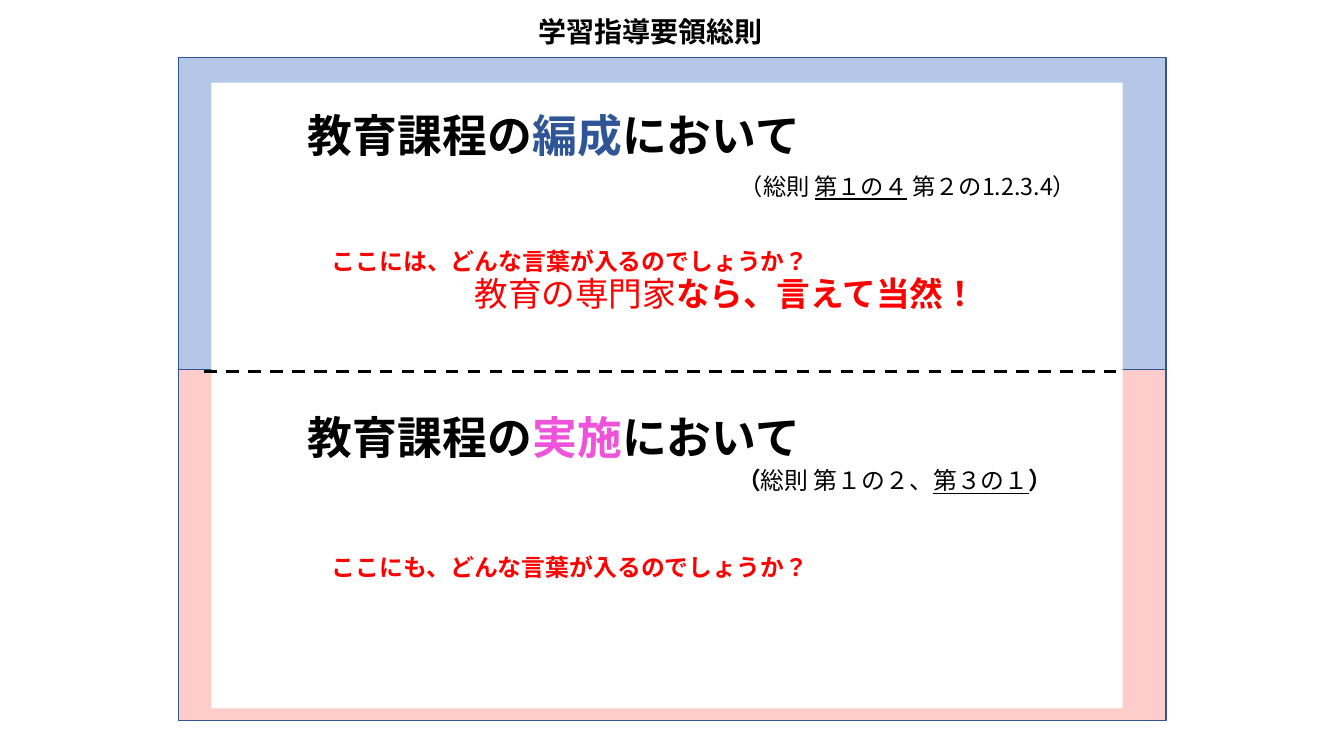
from dataclasses import dataclass
from pptx import Presentation
from pptx.dml.color import RGBColor
from pptx.enum.dml import MSO_LINE
from pptx.enum.lang import MSO_LANGUAGE_ID
from pptx.enum.shapes import MSO_CONNECTOR, MSO_SHAPE
from pptx.enum.text import MSO_ANCHOR, MSO_AUTO_SIZE, PP_ALIGN
from pptx.oxml.ns import qn
from pptx.util import Pt


@dataclass(frozen=True)
class Theme:
    font: str = "Noto Sans CJK JP"
    black: str = "000000"
    white: str = "FFFFFF"
    red: str = "FF0000"
    blue: str = "2F5597"
    magenta: str = "EF53DC"
    outline: str = "325491"
    upper_band: str = "B4C7E7"
    lower_band: str = "FFCCCC"
    title_size: float = 20
    heading_size: float = 32
    emphasis_size: float = 24
    prompt_size: float = 17
    reference_size: float = 16.6


class SlideBuilder:
    def __init__(self, slide, theme):
        self.slide = slide
        self.theme = theme

    def panel(self, left, top, width, height, fill, outline=None):
        shape = self.slide.shapes.add_shape(
            MSO_SHAPE.RECTANGLE, Pt(left), Pt(top), Pt(width), Pt(height))
        shape.shadow.inherit = False
        shape.fill.solid()
        shape.fill.fore_color.rgb = RGBColor.from_string(fill)
        if outline:
            shape.line.color.rgb = RGBColor.from_string(outline)
            shape.line.width = Pt(1)
        else:
            shape.line.fill.background()

    def dashed_line(self, left, right, y):
        connector = self.slide.shapes.add_connector(
            MSO_CONNECTOR.STRAIGHT, Pt(left), Pt(y), Pt(right), Pt(y))
        connector.line.color.rgb = RGBColor.from_string(self.theme.black)
        connector.line.width = Pt(2.25)
        connector.line.dash_style = MSO_LINE.DASH
        properties = connector._element.spPr
        properties.append(properties.makeelement(qn("a:effectLst"), {}))

    def title(self, left, top, width, height, text):
        shape = self.slide.shapes.title
        bounds = {"left": left, "top": top, "width": width, "height": height}
        for name, value in bounds.items():
            setattr(shape, name, Pt(value))
        self.fill_text(shape, self.theme.title_size, [(text, {"bold": True})])

    def text(self, left, top, width, size, runs):
        shape = self.slide.shapes.add_textbox(
            Pt(left), Pt(top), Pt(width), Pt(size * 1.45))
        self.fill_text(shape, size, runs)

    def fill_text(self, shape, size, runs):
        frame = shape.text_frame
        frame_format = {
            "margin_left": 0, "margin_right": 0, "margin_top": 0, "margin_bottom": 0,
            "word_wrap": True, "auto_size": MSO_AUTO_SIZE.NONE,
            "vertical_anchor": MSO_ANCHOR.TOP,
        }
        for name, value in frame_format.items():
            setattr(frame, name, value)
        paragraph = frame.paragraphs[0]
        paragraph.alignment = PP_ALIGN.LEFT
        for text, style in runs:
            run = paragraph.add_run()
            run.text = text
            style = {"color": self.theme.black, "bold": False, **style}
            run.font.color.rgb = RGBColor.from_string(style.pop("color"))
            run_format = {"name": self.theme.font, "size": Pt(size),
                          "language_id": MSO_LANGUAGE_ID.JAPANESE, **style}
            for name, value in run_format.items():
                setattr(run.font, name, value)
            properties = run.font._element
            east_asian = properties.makeelement(
                qn("a:ea"), {"typeface": self.theme.font})
            properties.find(qn("a:latin")).addnext(east_asian)


def main():
    presentation = Presentation()
    presentation.slide_width = Pt(960)
    presentation.slide_height = Pt(540)
    theme = Theme()
    slide = presentation.slides.add_slide(presentation.slide_layouts[5])
    builder = SlideBuilder(slide, theme)

    builder.title(384.5, 10, 180, 29, "学習指導要領総則")
    builder.panel(127.5, 252.5, 705.5, 262, theme.lower_band, theme.outline)
    builder.panel(127.5, 41, 705.5, 223, theme.upper_band, theme.outline)
    builder.panel(151, 59, 651, 447, theme.white)
    builder.dashed_line(146, 797, 265.5)

    bold = {"bold": True}
    underlined = {"underline": True}
    red = {"color": theme.red}
    bold_red = {**bold, **red}

    sections = [
        (77, "編成", theme.blue, 176, "ここには、どんな言葉が入るのでしょうか？"),
        (292.5, "実施", theme.magenta, 394.5, "ここにも、どんな言葉が入るのでしょうか？"),
    ]
    for heading_top, keyword, color, prompt_top, prompt in sections:
        builder.text(220, heading_top, 400, theme.heading_size, [
            ("教育課程の", bold),
            (keyword, {**bold, "color": color}),
            ("において", bold),
        ])
        builder.text(237, prompt_top, 400, theme.prompt_size, [(prompt, bold_red)])

    builder.text(339, 195, 420, theme.emphasis_size, [
        ("教育の専門家", red), ("なら、言えて当然！", bold_red)])
    builder.text(528.5, 123, 270, theme.reference_size, [
        ("（総則 ", {}), ("第１の４", underlined), (" 第２の1.2.3.4）", {})])
    builder.text(526.5, 333, 270, theme.prompt_size, [
        ("（", bold), ("総則 第１の２、", {}), ("第３の１", underlined), ("）", bold)])

    presentation.save("out.pptx")


if __name__ == "__main__":
    main()
